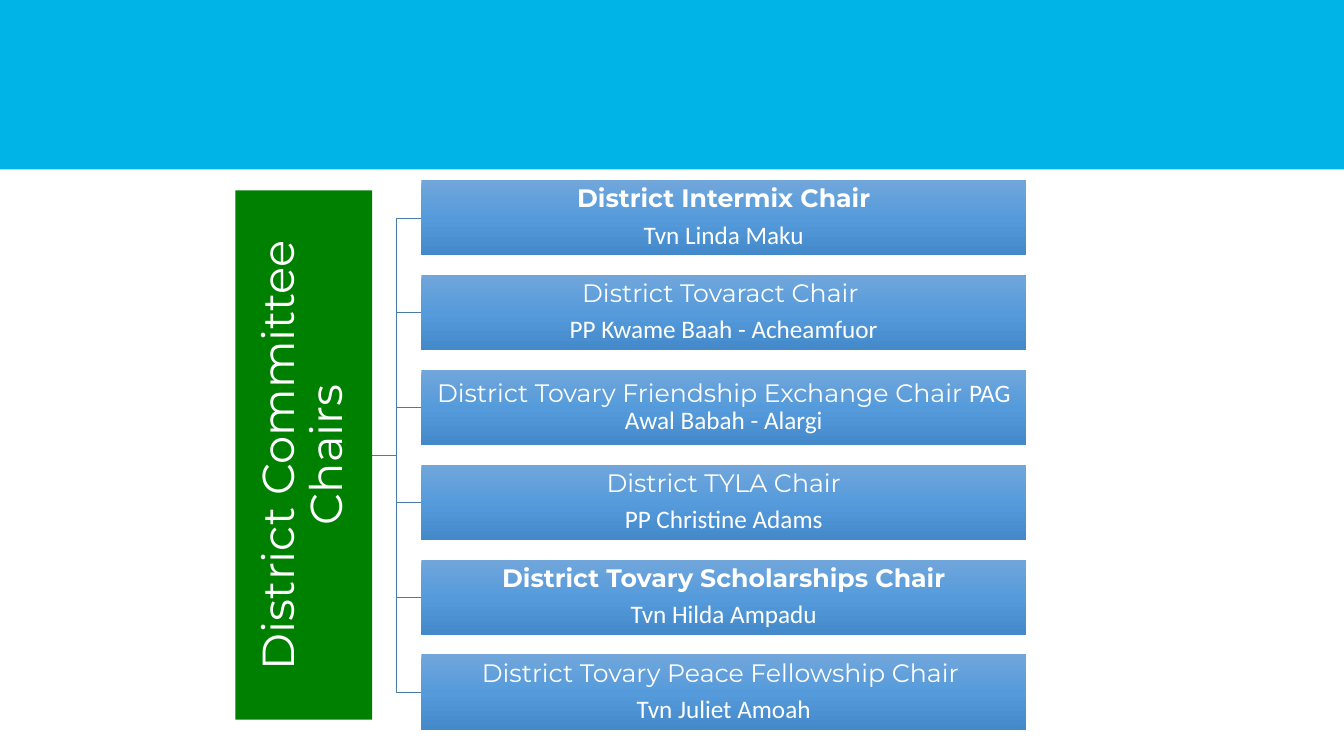
from lxml import etree
from pptx import Presentation
from pptx.dml.color import RGBColor
from pptx.enum.shapes import MSO_SHAPE
from pptx.enum.text import MSO_ANCHOR, PP_ALIGN
from pptx.oxml.ns import qn
from pptx.util import Cm, Pt

RECTANGLE = MSO_SHAPE.RECTANGLE
MIDDLE = MSO_ANCHOR.MIDDLE
CENTER = PP_ALIGN.CENTER

COLORS = {
    "band": "01B4E7",
    "title": "008000",
    "connector": "497CAB",
    "text": "FFFFFF",
}
BAR_GRADIENT = [(0, "71A6DB"), (50, "559BDB"), (100, "448ACA")]
HEADING_FONT, NAME_FONT = "Montserrat", "Calibri"

SLIDE_WIDTH, SLIDE_HEIGHT = 33.87, 19.05
BAND_HEIGHT = 4.27
TITLE_LEFT, TITLE_WIDTH, TITLE_HEIGHT = 5.93, 3.45, 13.34
BAR_LEFT, BAR_TOP, BAR_WIDTH, BAR_HEIGHT = 10.62, 4.54, 15.24, 1.9
BAR_PITCH = 2.39

# Each chair: paragraphs made of (text, font, bold) runs
CHAIRS = [
    [[("District Intermix Chair", HEADING_FONT, True)],
     [("Tvn Linda Maku", NAME_FONT, False)]],
    [[("District Tovaract Chair ", HEADING_FONT, False)],
     [("PP Kwame Baah - Acheamfuor", NAME_FONT, False)]],
    [[("District Tovary Friendship Exchange Chair ", HEADING_FONT, False),
      ("PAG Awal Babah - Alargi", NAME_FONT, False)]],
    [[("District TYLA Chair", HEADING_FONT, False)],
     [("PP Christine Adams", NAME_FONT, False)]],
    [[("District Tovary Scholarships Chair", HEADING_FONT, True)],
     [("Tvn Hilda Ampadu", NAME_FONT, False)]],
    [[("District Tovary Peace Fellowship Chair ", HEADING_FONT, False)],
     [("Tvn Juliet Amoah", NAME_FONT, False)]],
]


class SlideBuilder:
    def __init__(self, slide, colors):
        self.slide = slide
        self.colors = colors

    def color(self, name):
        return RGBColor.from_string(self.colors[name])

    def rectangle(self, left, top, width, height, fill=None):
        shape = self.slide.shapes.add_shape(
            RECTANGLE, Cm(left), Cm(top), Cm(width), Cm(height))
        shape.shadow.inherit = False
        shape.line.fill.background()
        if fill:
            shape.fill.solid()
            shape.fill.fore_color.rgb = self.color(fill)
        return shape

    def vertical_gradient(self, shape, stops):
        shape.fill.gradient()
        shape.fill.gradient_angle = 270
        stop_list = shape.fill._xPr.find(qn("a:gradFill")).find(qn("a:gsLst"))
        for stop in list(stop_list):
            stop_list.remove(stop)
        for percent, color in stops:
            stop = etree.SubElement(stop_list, qn("a:gs"), pos=str(percent * 1000))
            etree.SubElement(stop, qn("a:srgbClr"), val=color)

    def text(self, shape, paragraphs, size, margin):
        frame = shape.text_frame
        frame_format = {"word_wrap": True, "vertical_anchor": MIDDLE}
        for side in ("left", "top", "right", "bottom"):
            frame_format[f"margin_{side}"] = Cm(margin)
        for name, value in frame_format.items():
            setattr(frame, name, value)
        paragraph_format = {"alignment": CENTER, "line_spacing": 0.9,
                            "space_after": Pt(round(size * 0.35, 1))}
        for index, runs in enumerate(paragraphs):
            paragraph = frame.add_paragraph() if index else frame.paragraphs[0]
            for name, value in paragraph_format.items():
                setattr(paragraph, name, value)
            for content, font, bold in runs:
                run = paragraph.add_run()
                run.text = content
                run_format = {"name": font, "size": Pt(size), "bold": bold}
                for name, value in run_format.items():
                    setattr(run.font, name, value)
                run.font.color.rgb = self.color("text")

    def elbow(self, start_x, start_y, end_x, end_y):
        """Draw a branch that turns halfway between its two ends."""
        middle_x = (start_x + end_x) / 2
        builder = self.slide.shapes.build_freeform(Cm(start_x), Cm(start_y))
        corners = [(middle_x, start_y), (middle_x, end_y), (end_x, end_y)]
        builder.add_line_segments([(Cm(x), Cm(y)) for x, y in corners], close=False)
        shape = builder.convert_to_shape()
        shape.shadow.inherit = False
        shape.fill.background()
        shape.line.color.rgb = self.color("connector")
        shape.line.width = Pt(0.5)


def main():
    presentation = Presentation()
    presentation.slide_width = Cm(SLIDE_WIDTH)
    presentation.slide_height = Cm(SLIDE_HEIGHT)
    slide = presentation.slides.add_slide(presentation.slide_layouts[6])
    builder = SlideBuilder(slide, COLORS)

    builder.rectangle(0, 0, SLIDE_WIDTH, BAND_HEIGHT, "band")

    bar_tops = [BAR_TOP + index * BAR_PITCH for index in range(len(CHAIRS))]
    center_y = (bar_tops[0] + bar_tops[-1] + BAR_HEIGHT) / 2
    for top in reversed(bar_tops):
        builder.elbow(TITLE_LEFT + TITLE_WIDTH, center_y,
                      BAR_LEFT, top + BAR_HEIGHT / 2)

    # The title is laid out flat around its centre, then turned upright
    center_x = TITLE_LEFT + TITLE_WIDTH / 2
    title = builder.rectangle(center_x - TITLE_HEIGHT / 2, center_y - TITLE_WIDTH / 2,
                              TITLE_HEIGHT, TITLE_WIDTH, "title")
    title.rotation = 270
    builder.text(title, [[("District Committee Chairs", HEADING_FONT, False)]], 32, 0.05)

    for top, paragraphs in zip(bar_tops, CHAIRS):
        bar = builder.rectangle(BAR_LEFT, top, BAR_WIDTH, BAR_HEIGHT)
        builder.vertical_gradient(bar, BAR_GRADIENT)
        builder.text(bar, paragraphs, 18, 0.03)

    presentation.save("out.pptx")


if __name__ == "__main__":
    main()
